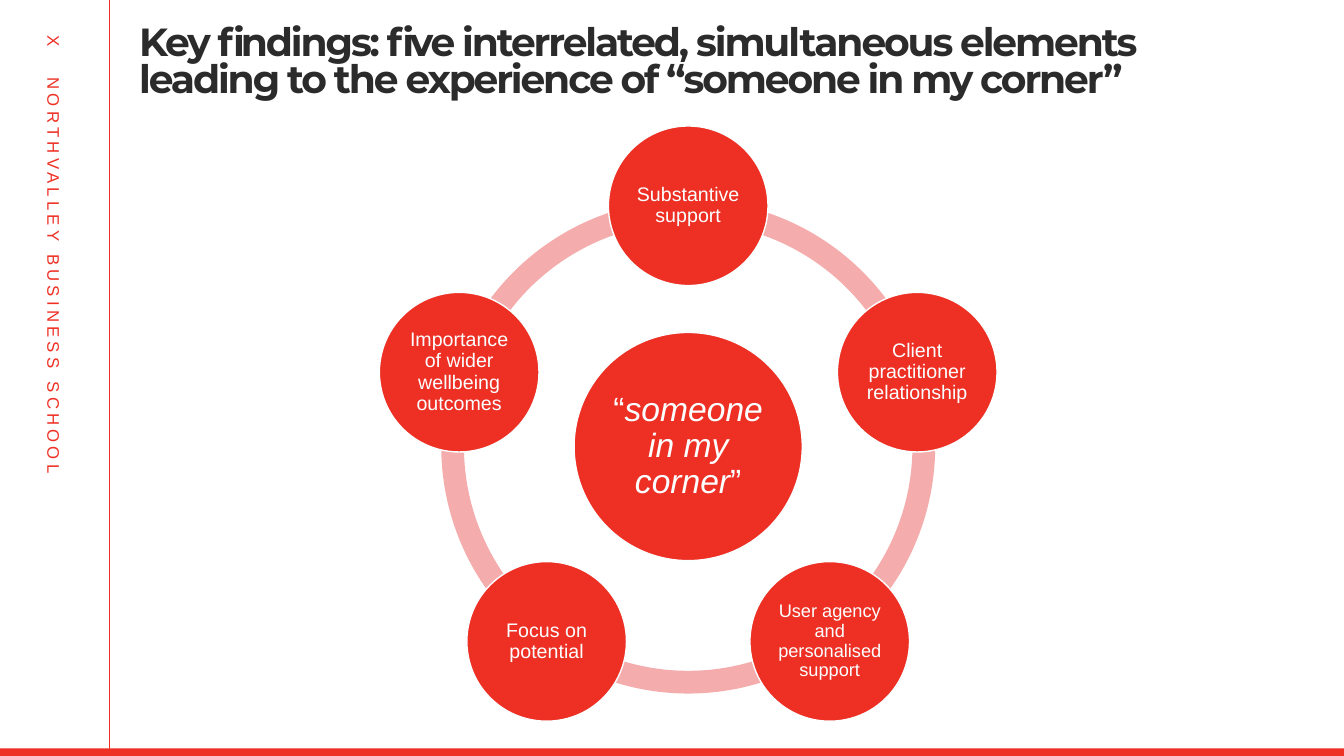
from math import cos, radians, sin

from lxml.etree import SubElement
from pptx import Presentation
from pptx.dml.color import RGBColor
from pptx.enum.shapes import MSO_CONNECTOR, MSO_SHAPE
from pptx.enum.text import MSO_ANCHOR, MSO_AUTO_SIZE, PP_ALIGN
from pptx.oxml.ns import qn
from pptx.util import Pt

TITLE = ("Key findings: five interrelated, simultaneous elements "
         "leading to the experience of “someone in my corner”")
SIDE_LABEL = "X\tNORTHVALLEY BUSINESS SCHOOL"
HUB = [("“", False), ("someone in my corner", True), ("”", False)]  # text, italic
ELEMENTS = [  # clockwise from the top: text, type size
    ("Substantive support", 14),
    ("Client practitioner relationship", 14),
    ("User agency and personalised support", 13),
    ("Focus on potential", 14),
    ("Importance of wider wellbeing outcomes", 14),
]

THEME = {
    "red": RGBColor(0xED, 0x2F, 0x24),
    "rule": RGBColor(0xEE, 0x30, 0x24),
    "pink": RGBColor(0xF4, 0xAD, 0xAC),
    "white": RGBColor(0xFC, 0xFF, 0xFF),
    "ink": RGBColor(0x2B, 0x2B, 0x2B),
    "title_font": "Montserrat",
    "body_font": "Arial",
    "title_size": 28,
    "hub_size": 24,
    "side_size": 12,
}

WIDTH, HEIGHT = 960, 540
CENTRE_X, CENTRE_Y = 491.6, 319
RING, HUB_DIAMETER, ELEMENT_DIAMETER = 352.8, 163, 114
ORBIT = 172
RING_THICKNESS = 0.046


def style_run(run, size, color, font, bold=False, italic=False, spacing=0):
    run.font.size = Pt(size)
    run.font.name = font
    run.font.color.rgb = color
    run.font.bold = bold
    run.font.italic = italic
    if spacing:
        run._r.get_or_add_rPr().set("spc", str(int(spacing * 100)))


def set_insets(frame, left, top, right, bottom):
    frame.margin_left, frame.margin_top = Pt(left), Pt(top)
    frame.margin_right, frame.margin_bottom = Pt(right), Pt(bottom)


def add_flat(slide, preset, left, top, width, height, color):
    shape = slide.shapes.add_shape(preset, Pt(left), Pt(top), Pt(width), Pt(height))
    shape.shadow.inherit = False
    shape.fill.solid()
    shape.fill.fore_color.rgb = color
    shape.line.fill.background()
    return shape


def add_centred(slide, preset, x, y, diameter, color):
    return add_flat(slide, preset, x - diameter / 2, y - diameter / 2,
                    diameter, diameter, color)


def add_bubble(slide, x, y, diameter, parts, size):
    """Add a labelled circle; parts holds (text, italic) pairs."""
    bubble = add_centred(slide, MSO_SHAPE.OVAL, x, y, diameter, THEME["red"])
    bubble.line.color.rgb = THEME["white"]
    bubble.line.width = Pt(1)
    frame = bubble.text_frame
    frame.word_wrap = True
    frame.vertical_anchor = MSO_ANCHOR.MIDDLE
    set_insets(frame, 1.5, 1.5, 1.5, 1.5)
    label = frame.paragraphs[0]
    label.alignment = PP_ALIGN.CENTER
    label.line_spacing = 0.9
    for text, italic in parts:
        run = label.add_run()
        run.text = text
        style_run(run, size, THEME["white"], THEME["body_font"], italic=italic)


def add_frame(slide):
    """Add the margin rule, the turned side label and the bottom bar."""
    rule = slide.shapes.add_connector(MSO_CONNECTOR.STRAIGHT, Pt(78), Pt(0), Pt(78), Pt(HEIGHT))
    rule.line.color.rgb = THEME["rule"]
    rule.line.width = Pt(0.5)
    SubElement(rule._element.spPr, qn("a:effectLst"))

    side = slide.shapes.add_textbox(Pt(-165.6), Pt(211.7), Pt(408.2), Pt(21.6))
    side.rotation = 90
    side.text_frame.word_wrap = True
    label = side.text_frame.paragraphs[0]
    label.text = SIDE_LABEL
    tabs = SubElement(label._p.get_or_add_pPr(), qn("a:tabLst"))
    SubElement(tabs, qn("a:tab"), pos=str(Pt(30)), algn="l")
    for run in label.runs:
        style_run(run, THEME["side_size"], THEME["rule"], THEME["body_font"], spacing=3)

    add_flat(slide, MSO_SHAPE.RECTANGLE, 0, 534.6, WIDTH, HEIGHT - 534.6, THEME["red"])


def add_title(slide):
    title = slide.shapes.title
    title.left, title.top, title.width, title.height = Pt(99.4), Pt(3.6), Pt(805), Pt(99.4)
    frame = title.text_frame
    frame.text = TITLE
    frame.word_wrap = True
    frame.auto_size = MSO_AUTO_SIZE.NONE
    frame.vertical_anchor = MSO_ANCHOR.TOP
    set_insets(frame, 0, 15, 0, 0)
    heading = frame.paragraphs[0]
    heading.alignment = PP_ALIGN.LEFT
    heading.line_spacing = 0.8
    style_run(heading.runs[0], THEME["title_size"], THEME["ink"], THEME["title_font"],
              bold=True, spacing=-1.5)


def add_cycle(slide):
    ring = add_centred(slide, MSO_SHAPE.DONUT, CENTRE_X, CENTRE_Y, RING, THEME["pink"])
    ring.adjustments[0] = RING_THICKNESS
    add_bubble(slide, CENTRE_X, CENTRE_Y, HUB_DIAMETER, HUB, THEME["hub_size"])
    for i, (text, size) in enumerate(ELEMENTS):
        angle = radians(360 / len(ELEMENTS) * i - 90)
        add_bubble(slide, CENTRE_X + ORBIT * cos(angle), CENTRE_Y + ORBIT * sin(angle),
                   ELEMENT_DIAMETER, [(text, False)], size)


def main():
    deck = Presentation()
    deck.slide_width, deck.slide_height = Pt(WIDTH), Pt(HEIGHT)
    slide = deck.slides.add_slide(deck.slide_layouts[5])
    add_frame(slide)
    add_title(slide)
    add_cycle(slide)
    deck.save("out.pptx")


if __name__ == "__main__":
    main()
